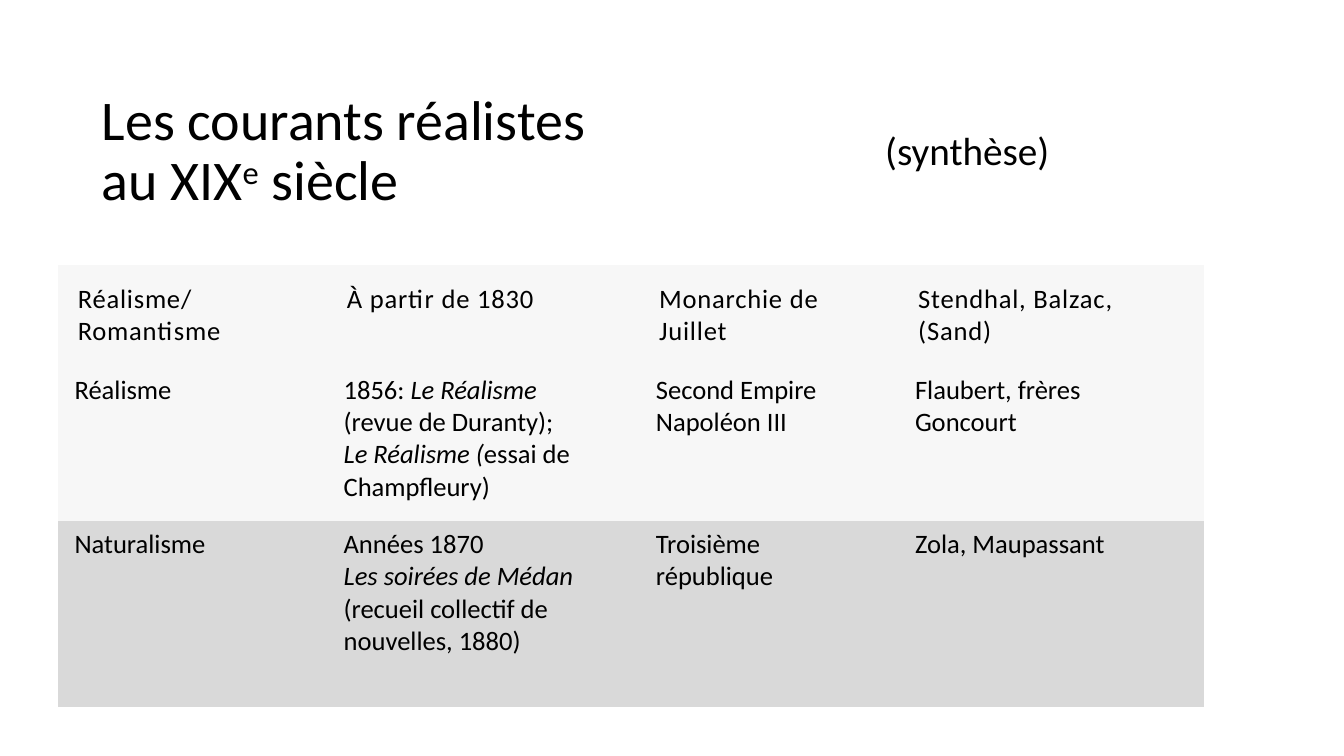
from dataclasses import dataclass

from lxml.etree import SubElement
from pptx import Presentation
from pptx.dml.color import RGBColor
from pptx.enum.text import MSO_ANCHOR, MSO_AUTO_SIZE, PP_ALIGN
from pptx.oxml.ns import qn
from pptx.util import Cm, Pt

NO_STYLE_NO_GRID = "{2D5ABB26-0587-4C30-8999-92F81FD0307C}"
BLACK, PALE, GREY = "000000", "F7F7F7", "D9D9D9"


@dataclass(frozen=True)
class Span:
    text: str
    italic: bool = False
    superscript: bool = False


@dataclass(frozen=True)
class Movement:
    """One table row: each cell is a list of paragraphs, each a list of spans."""
    cells: list[list[list[Span]]]
    height: float
    fill: str
    margins: tuple[float, float, float, float]  # left, top, right, bottom
    spacing: int = 0  # hundredths of a point


def rgb(code: str) -> RGBColor:
    return RGBColor.from_string(code)


def apply_format(target, values: dict) -> None:
    for name, value in values.items():
        setattr(target, name, value)


def plain(*lines: str) -> list[list[Span]]:
    return [[Span(line)] for line in lines]


def write_spans(paragraph, spans: list[Span], size: float, spacing: int = 0) -> None:
    for span in spans:
        run = paragraph.add_run()
        run.text = span.text
        apply_format(run.font, {"name": "Calibri", "size": Pt(size),
                                "bold": False, "italic": span.italic})
        run.font.color.rgb = rgb(BLACK)
        properties = run.font._element
        if spacing:
            properties.set("spc", str(spacing))
        if span.superscript:
            properties.set("baseline", "30000")


def fill_placeholder(holder, box: dict, spans: list[Span], size: float,
                     paragraph_format: dict) -> None:
    apply_format(holder, box)
    apply_format(holder.text_frame, {"word_wrap": True,
                                     "auto_size": MSO_AUTO_SIZE.NONE,
                                     "vertical_anchor": MSO_ANCHOR.MIDDLE})
    paragraph = holder.text_frame.paragraphs[0]
    apply_format(paragraph, {"line_spacing": 0.9, **paragraph_format})
    write_spans(paragraph, spans, size)


def fill_cell(cell, lines: list[list[Span]], movement: Movement) -> None:
    sides = ("margin_left", "margin_top", "margin_right", "margin_bottom")
    apply_format(cell, dict(zip(sides, map(Cm, movement.margins))))
    cell.fill.solid()
    cell.fill.fore_color.rgb = rgb(movement.fill)
    frame = cell.text_frame
    for index, spans in enumerate(lines):
        paragraph = frame.add_paragraph() if index else frame.paragraphs[0]
        write_spans(paragraph, spans, 19, movement.spacing)


ROOMY, TIGHT = (0.51, 0.46, 0.51, 0.46), (0.43, 0.2, 0.43, 0.3)
COLUMN_WIDTHS = [6.78, 7.87, 6.53, 7.7]
MOVEMENTS = [
    Movement([plain("Réalisme/", "Romantisme"),
              plain("À partir de 1830"),
              plain("Monarchie de Juillet"),
              plain("Stendhal, Balzac, (Sand)")],
             2.24, PALE, ROOMY, spacing=60),
    Movement([plain("Réalisme"),
              [[Span("1856: "), Span("Le Réalisme", italic=True)],
               [Span("(revue de Duranty);")],
               [Span("Le Réalisme (", italic=True), Span("essai de Champfleury)")]],
              plain("Second Empire", "Napoléon III"),
              plain("Flaubert, frères Goncourt")],
             3.89, PALE, TIGHT),
    Movement([plain("Naturalisme"),
              [[Span("Années 1870")],
               [Span("Les soirées de Médan", italic=True)],
               [Span("(recueil collectif de nouvelles, 1880)")]],
              plain("Troisième république"),
              plain("Zola, Maupassant")],
             4.7, GREY, TIGHT),
]


def main() -> None:
    deck = Presentation()
    apply_format(deck, {"slide_width": Cm(33.87), "slide_height": Cm(19.05)})
    slide = deck.slides.add_slide(deck.slide_layouts[1])
    slide.background.fill.solid()
    slide.background.fill.fore_color.rgb = rgb("FFFFFF")

    # Heading and subtitle
    band = {"top": Cm(1.52), "width": Cm(14.35), "height": Cm(4.65)}
    fill_placeholder(slide.shapes.title, {"left": Cm(2.31), **band},
                     [Span("Les courants réalistes au XIX"),
                      Span("e", superscript=True), Span(" siècle")],
                     40, {"alignment": PP_ALIGN.LEFT})
    synthesis = slide.placeholders[1]
    fill_placeholder(synthesis, {"left": Cm(17.2), **band}, [Span("(synthèse)")],
                     28, {"alignment": PP_ALIGN.CENTER, "space_before": Pt(10)})
    bullet_properties = synthesis.text_frame.paragraphs[0]._p.get_or_add_pPr()
    apply_format_xml = {"marL": "0", "indent": "0"}
    for name, value in apply_format_xml.items():
        bullet_properties.set(name, value)
    SubElement(bullet_properties, qn("a:buNone"))

    # Table of movements
    heights = [movement.height for movement in MOVEMENTS]
    movements_table = slide.shapes.add_table(
        len(MOVEMENTS), len(COLUMN_WIDTHS), Cm(1.45), Cm(6.68),
        Cm(sum(COLUMN_WIDTHS)), Cm(sum(heights))).table
    apply_format(movements_table, {"first_row": False, "horz_banding": False})
    movements_table._tbl.tblPr.find(qn("a:tableStyleId")).text = NO_STYLE_NO_GRID
    for column, width in zip(movements_table.columns, COLUMN_WIDTHS):
        column.width = Cm(width)
    for row, movement in zip(movements_table.rows, MOVEMENTS):
        row.height = Cm(movement.height)
        for cell, lines in zip(row.cells, movement.cells):
            fill_cell(cell, lines, movement)

    deck.save("out.pptx")


if __name__ == "__main__":
    main()
